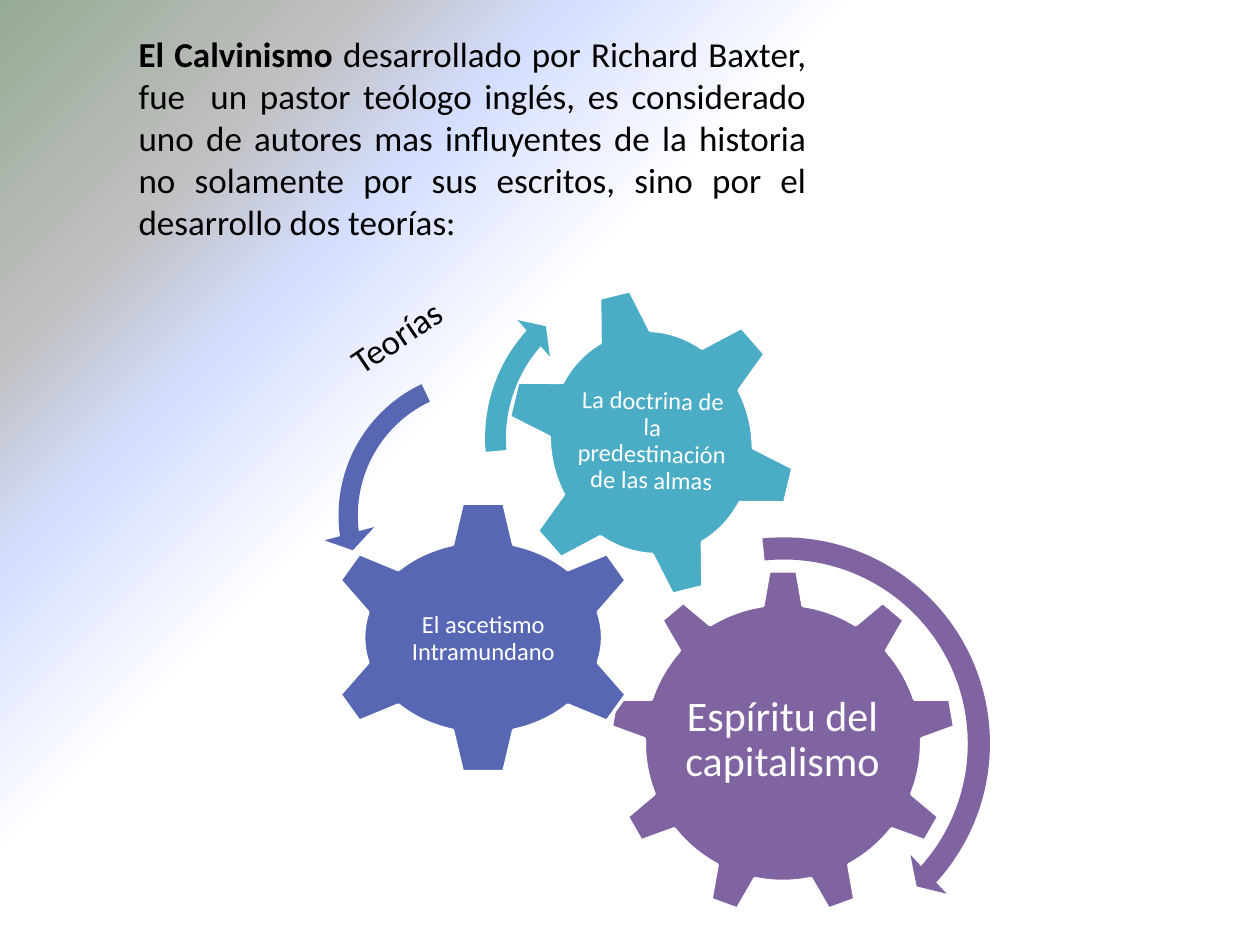
from pptx import Presentation
from pptx import util as u
from pptx.dml.color import RGBColor
from pptx.enum import shapes, text
from pptx.oxml import parse_xml
from pptx.oxml.ns import nsdecls

FONT = "Calibri"
COLORS = {
    "purple": "8064A2", "indigo": "5767B4", "teal": "4BACC6",
    "white": "FFFFFF", "black": "000000",
    "sky": "D4DEFF", "grey": "BFBFBF", "green": "96AB94",
}
# Position and opacity in percent
GRADIENT = [(61, "white", 100), (74, "sky", 100), (84, "grey", 43), (100, "green", 100)]

INTRO = [
    ("El Calvinismo ", True),
    ("desarrollado por Richard Baxter, fue  un pastor teólogo inglés, es considerado "
     "uno de autores mas influyentes de la historia no solamente por sus escritos, "
     "sino por el desarrollo dos teorías:", False),
]

SHAPE = shapes.MSO_SHAPE
# Kind, colour, box in cm, rotation
GEARS = [
    (SHAPE.GEAR_9, "purple", (12.29, 11.48, 6.99, 6.99), 0),
    (SHAPE.GEAR_6, "indigo", (6.5, 10.08, 6.48, 5.54), 0),
    (SHAPE.GEAR_6, "teal", (10.21, 5.77, 5.84, 6.3), 346.2),
]
# Wording, size, box in cm, inset in cm, rotation
LABELS = [
    ("Espíritu del capitalismo", 24, (13.69, 13.13, 4.17, 3.58), 0.08, 0),
    ("El ascetismo Intramundano", 14, (8.03, 11.51, 3.43, 2.74), 0.05, 0),
    ("La doctrina de la predestinación de las almas", 14,
     (11.48, 7.16, 3.33, 3.48), 0.05, 1.2),
]
# Kind, colour, left, top and side in cm, rotation, adjustments
ARROWS = [
    (SHAPE.CIRCULAR_ARROW, "purple", (11.33, 10.52, 8.94), 0,
     (0.05, 2.99, 25.24, 158.44, 0.06)),
    (SHAPE.LEFT_CIRCULAR_ARROW, "indigo", (6.5, 7.14, 6.5), 357.4,
     (0.06, 4.3, 104.89, 148.38, 0.08)),
    (SHAPE.CIRCULAR_ARROW, "teal", (9.5, 5.33, 7.01), 0,
     (0.06, 3.94, 133.14, 105.08, 0.07)),
]


def rgb(name):
    return RGBColor.from_string(COLORS[name])


def cm_box(box):
    return [u.Cm(value) for value in box]


def format_run(run, size, color, bold=False):
    run.font.name = FONT
    run.font.size = u.Pt(size)
    run.font.bold = bold
    run.font.color.rgb = rgb(color)


def set_background(slide):
    stops = "".join(
        f'<a:gs pos="{position * 1000}"><a:srgbClr val="{COLORS[color]}">'
        f'<a:alpha val="{opacity * 1000}"/></a:srgbClr></a:gs>'
        for position, color, opacity in GRADIENT)
    background = parse_xml(
        f'<p:bg {nsdecls("p", "a")}><p:bgPr><a:gradFill><a:gsLst>{stops}</a:gsLst>'
        '<a:path path="circle"><a:fillToRect l="100000" t="100000"/></a:path>'
        '</a:gradFill><a:effectLst/></p:bgPr></p:bg>')
    slide.element.cSld.insert(0, background)


def fill_intro(placeholder):
    placeholder.left, placeholder.top, placeholder.width, placeholder.height = cm_box(
        (1.27, 0.53, 15.24, 4.6))
    frame = placeholder.text_frame
    frame.auto_size = text.MSO_AUTO_SIZE.NONE
    paragraph = frame.paragraphs[0]
    paragraph.alignment = text.PP_ALIGN.JUSTIFY
    paragraph.space_before = u.Pt(4)
    for wording, bold in INTRO:
        run = paragraph.add_run()
        run.text = wording
        format_run(run, 20, "black", bold)
    # Indent without a bullet
    properties = paragraph._p.get_or_add_pPr()
    properties.set("marL", str(u.Cm(1.27)))
    properties.set("indent", "0")
    properties.append(parse_xml(f'<a:buNone {nsdecls("a")}/>'))


def add_filled_shape(parent, kind, color, box, rotation):
    shape = parent.shapes.add_shape(kind, *cm_box(box))
    shape.shadow.inherit = False
    shape.rotation = rotation
    shape.fill.solid()
    shape.fill.fore_color.rgb = rgb(color)
    shape.line.fill.background()
    return shape


def add_gear(parent, kind, color, box, rotation):
    gear = add_filled_shape(parent, kind, color, box, rotation)
    gear.line.color.rgb = rgb("white")
    gear.line.width = u.Pt(2)


def add_arrow(parent, kind, color, square, rotation, adjustments):
    left, top, side = square
    arrow = add_filled_shape(parent, kind, color, (left, top, side, side), rotation)
    for index, value in enumerate(adjustments):
        arrow.adjustments[index] = value


def add_text(parent, wording, size, color, box, rotation):
    shape = parent.shapes.add_textbox(*cm_box(box))
    shape.rotation = rotation
    frame = shape.text_frame
    frame.word_wrap = True
    frame.text = wording
    paragraph = frame.paragraphs[0]
    paragraph.alignment = text.PP_ALIGN.CENTER
    format_run(paragraph.runs[0], size, color)
    return frame


def add_gear_label(parent, wording, size, box, inset, rotation):
    frame = add_text(parent, wording, size, "white", box, rotation)
    frame.vertical_anchor = text.MSO_ANCHOR.MIDDLE
    frame.margin_left = frame.margin_right = u.Cm(inset)
    frame.margin_top = frame.margin_bottom = u.Cm(inset)
    frame.paragraphs[0].line_spacing = 0.9
    frame.paragraphs[0].space_after = u.Pt(round(size * 0.35, 1))


def main():
    presentation = Presentation()
    presentation.slide_width, presentation.slide_height = u.Cm(25.4), u.Cm(19.05)
    slide = presentation.slides.add_slide(presentation.slide_layouts[1])
    set_background(slide)

    # Introduction
    title = slide.shapes.title.element
    title.getparent().remove(title)
    fill_intro(slide.placeholders[1])

    # Gear diagram
    diagram = slide.shapes.add_group_shape()
    for gear, label in zip(GEARS, LABELS):
        add_gear(diagram, *gear)
        add_gear_label(diagram, *label)
    for arrow in ARROWS:
        add_arrow(diagram, *arrow)

    # Slanted caption
    caption = add_text(slide, "Teorías", 20, "black", (5.84, 6.22, 4.29, 1.12), 326)
    caption.auto_size = text.MSO_AUTO_SIZE.SHAPE_TO_FIT_TEXT

    presentation.save("out.pptx")


if __name__ == "__main__":
    main()
